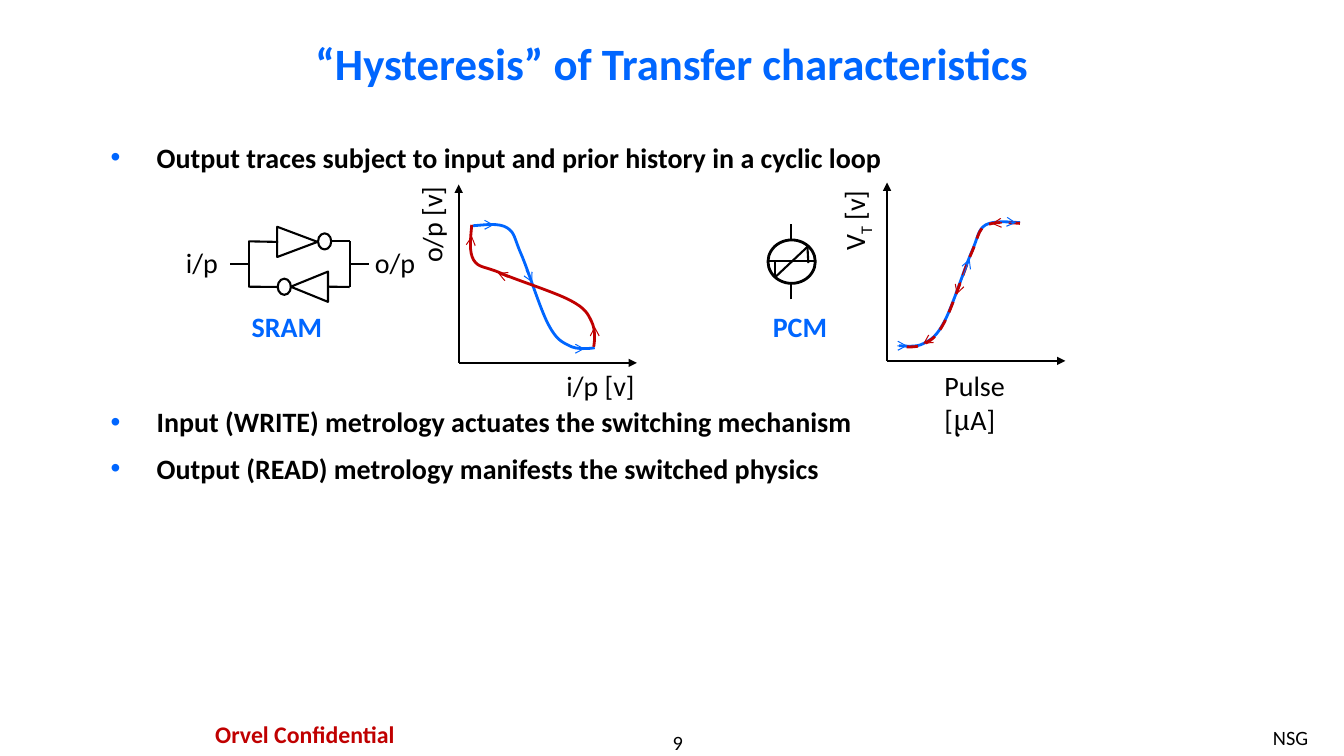
"""Build the slide on hysteresis of SRAM and PCM transfer characteristics."""
from lxml import etree
from pptx import Presentation
from pptx.dml.color import RGBColor
from pptx.enum.dml import MSO_LINE
from pptx.enum.shapes import MSO_CONNECTOR, MSO_SHAPE
from pptx.enum.text import MSO_ANCHOR, PP_ALIGN
from pptx.oxml.ns import qn
from pptx.util import Pt

STRAIGHT = MSO_CONNECTOR.STRAIGHT
TRIANGLE, OVAL = MSO_SHAPE.ISOSCELES_TRIANGLE, MSO_SHAPE.OVAL
LEFT, CENTER = PP_ALIGN.LEFT, PP_ALIGN.CENTER
TOP, MIDDLE = MSO_ANCHOR.TOP, MSO_ANCHOR.MIDDLE
DASH = MSO_LINE.DASH

THEME = {
    "black": RGBColor(0x00, 0x00, 0x00),
    "blue": RGBColor(0x00, 0x66, 0xFF),
    "red": RGBColor(0xC0, 0x00, 0x00),
    "font": "Calibri", "symbol_font": "Cambria",
    "title": Pt(32), "body": Pt(20), "mark": Pt(17), "footer": Pt(14.5),
    "curve": Pt(2), "outline": Pt(1.5), "arrow": Pt(0.75),
}

prs = Presentation()
prs.slide_width, prs.slide_height = Pt(960), Pt(540)
s = prs.slides.add_slide(prs.slide_layouts[6])


def add_text(box, paragraphs, size="body", color="black", bold=False,
             align=LEFT, anchor=TOP, margins=(0, 0), bullet=False):
    sp = s.shapes.add_textbox(*map(Pt, box))
    tf = sp.text_frame
    frame = {"word_wrap": True, "vertical_anchor": anchor,
             "margin_left": Pt(margins[0]), "margin_right": Pt(margins[0]),
             "margin_top": Pt(margins[1]), "margin_bottom": Pt(margins[1])}
    for name, value in frame.items():
        setattr(tf, name, value)
    for i, runs in enumerate(paragraphs):
        p = tf.add_paragraph() if i else tf.paragraphs[0]
        p.alignment = align
        if i:
            p.space_before = Pt(9.2)
        if bullet:
            pPr = p._p.get_or_add_pPr()
            pPr.set("marL", str(Pt(32.8)))
            pPr.set("indent", str(-Pt(32.8)))
            clr = etree.SubElement(pPr, qn("a:buClr"))
            etree.SubElement(clr, qn("a:srgbClr")).set("val", str(THEME["blue"]))
            etree.SubElement(pPr, qn("a:buFont")).set("typeface", "Arial")
            etree.SubElement(pPr, qn("a:buChar")).set("char", "•")
        for text, style in runs:
            r = p.add_run()
            r.text = text
            font = {"name": THEME[style if style == "symbol_font" else "font"],
                    "size": THEME[size], "bold": bold}
            for name, value in font.items():
                setattr(r.font, name, value)
            r.font.color.rgb = THEME[color]
            if style == "sub":
                r.font._element.set("baseline", "-25000")
    return sp


def add_line(ends, color="black", width="outline", head=None):
    sp = s.shapes.add_connector(STRAIGHT, *map(Pt, ends))
    sp.line.color.rgb, sp.line.width = THEME[color], THEME[width]
    if head:
        ln = sp.line._get_or_add_ln()
        etree.SubElement(ln, qn("a:tailEnd")).set("type", head)
    etree.SubElement(sp._element.spPr, qn("a:effectLst"))


add_text((72, 11.8, 816, 66.2), [[("“Hysteresis” of Transfer characteristics", "")]],
         "title", "blue", True, CENTER, MIDDLE, (7.2, 3.6))
add_text((72, 96.5, 816, 32), [[("Output traces subject to input and prior history in a cyclic loop", "")]],
         bold=True, margins=(7.2, 3.6), bullet=True)
add_text((72, 285.5, 816, 66),
         [[("Input (WRITE) metrology actuates the switching mechanism", "")],
          [("Output (READ) metrology manifests the switched physics", "")]],
         bold=True, margins=(7.2, 3.6), bullet=True)
for name, center in (("SRAM", 205), ("PCM", 571.4)):
    add_text((center - 40, 220.7, 80, 24.4), [[(name, "")]], "body", "blue", True, CENTER)

add_text((400.3, 521.3, 167.8, 17.3), [[("9", "")]], "footer", align=CENTER)
add_text((902.2, 514.8, 50.4, 25.2), [[("NSG", "")]], "footer", margins=(7.2, 3.6))
add_text((111.6, 509.8, 212.4, 29.5), [[("Orvel Confidential", "")]],
         "mark", "red", True, CENTER, margins=(8.6, 4.3))

for box, runs, rotation, align in (
    ((132.8, 175, 30, 24.4), [("i/p", "")], 0, LEFT),
    ((267.8, 175, 40, 24.4), [("o/p", "")], 0, LEFT),
    ((404.6, 263.5, 60, 24.4), [("i/p [v]", "")], 0, LEFT),
    ((273.2, 148.3, 70, 24.4), [("o/p [v]", "")], 270, CENTER),
    ((674.6, 263.5, 60, 48.8),
     [("Pulse [", ""), ("μ", "symbol_font"), ("A]", "")], 0, LEFT),
    ((580.2, 145.4, 60, 24.4), [("V", ""), ("T", "sub"), (" [v]", "")], 270, CENTER),
):
    add_text(box, [runs], align=align).rotation = rotation

AXIS = 127.4
for x, y in ((327.6, 259.2), (633.6, 257.8)):
    add_line((x, y, x, y - AXIS), head="triangle")
    add_line((x, y, x + AXIS, y), head="triangle")

sram_falling = [
    (337.7, 161.3), (347, 160.6), (356.4, 159.1), (362.2, 162.7),
    (367.9, 166.3), (367.2, 169.9), (372.2, 181.4),
    (377.3, 193), (385.9, 221), (391.7, 231.8),
    (397.4, 242.6), (401, 244.1), (406.8, 247),
    (411.8, 249.8), (421.2, 249.1), (424.8, 248.4)]
sram_rising = [
    (337, 160.6), (336.2, 169.9), (334.8, 180), (338.4, 185.8),
    (342, 191.5), (346.3, 190.1), (357.8, 195.1),
    (369.4, 200.2), (396.7, 208.8), (407.5, 214.6),
    (418.3, 220.3), (419.8, 223.9), (422.6, 229.7),
    (425.5, 235.4), (424.8, 244.1), (424.1, 247.7)]
pcm_forward = [
    (728.6, 159.1), (719.3, 158.4), (709.9, 157.7), (704.2, 160.6),
    (698.4, 164.2), (699.1, 168.5), (694.1, 180),
    (689, 191.5), (680.4, 218.9), (674.6, 229.7),
    (668.9, 240.5), (665.3, 242.6), (659.5, 245.5),
    (654.5, 248.4), (645.1, 247), (642.2, 247)]
pcm_reverse = [(x, y + 0.5) for x, y in pcm_forward]

for points, color, dash in (
    (sram_falling, "blue", None), (sram_rising, "red", None),
    (pcm_forward, "blue", None), (pcm_reverse, "red", DASH),
):
    start, *rest = [(Pt(x), Pt(y)) for x, y in points]
    builder = s.shapes.build_freeform(*start)
    builder.add_line_segments(rest, close=False)
    sp = builder.convert_to_shape()
    sp.shadow.inherit = False
    sp.fill.background()
    sp.line.color.rgb, sp.line.width = THEME[color], THEME["curve"]
    if dash:
        sp.line.dash_style = dash
    outline = sp._element.xpath(".//a:path")[0]
    segments = outline.findall(qn("a:lnTo"))
    for i in range(0, len(segments), 3):
        bezier = etree.SubElement(outline, qn("a:cubicBezTo"))
        for segment in segments[i:i + 3]:
            bezier.append(segment[0])
            outline.remove(segment)

direction_arrows = {
    "blue": [(375.8, 193, 380.2, 201.6), (345.6, 160.6, 352.8, 160.6),
             (410.4, 249.1, 417.6, 249.1), (686.2, 201.6, 692.6, 185),
             (718.6, 158.4, 725.8, 159.1), (642.2, 247, 648, 247)],
    "red": [(362.9, 198, 355.7, 195.1), (336.2, 175.7, 337, 168.5),
            (424.8, 240.5, 424.8, 233.3), (686.2, 201.6, 683.3, 210.2),
            (715.7, 159.1, 708.5, 159.8), (667.4, 240.5, 659.5, 245.5)],
}
for color, arrows in direction_arrows.items():
    for ends in arrows:
        add_line(ends, color, "arrow", "arrow")

for kind, box, rotation, width in (
    (TRIANGLE, (201.6, 158.4, 21.6, 28.8), 90, "outline"),
    (OVAL, (227.2, 166.7, 9.4, 11.5), 0, "outline"),
    (TRIANGLE, (210.2, 191.5, 21.6, 26.6), 270, "outline"),
    (OVAL, (198.4, 199.1, 9.4, 11.5), 0, "outline"),
    (OVAL, (548.6, 171.4, 33.8, 31), 0, "curve"),
):
    sp = s.shapes.add_shape(kind, *map(Pt, box))
    sp.shadow.inherit = False
    sp.rotation = rotation
    sp.fill.background()
    sp.line.color.rgb, sp.line.width = THEME["black"], THEME[width]

sram_wires = [
    (198.7, 172.8, 177.5, 172.4), (249.8, 172.4, 236.2, 172.4),
    (234.7, 204.8, 249.8, 205), (177.5, 204.8, 198, 205),
    (249.8, 205, 249.8, 172.4), (177.8, 205, 177.8, 172.4),
    (263.5, 188.6, 249.8, 188.6), (177.8, 188.6, 164.2, 188.6)]
pcm_wires = [
    (548.6, 186.5, 582.5, 186.5), (553.7, 198, 577.4, 175.7),
    (577.4, 187.9, 576.7, 175), (553.7, 198, 553.7, 187.2),
    (565.2, 171.4, 565.2, 159.8), (565.2, 213.8, 565.2, 202.3)]
for ends in sram_wires + pcm_wires:
    add_line(ends)

prs.save("out.pptx")
